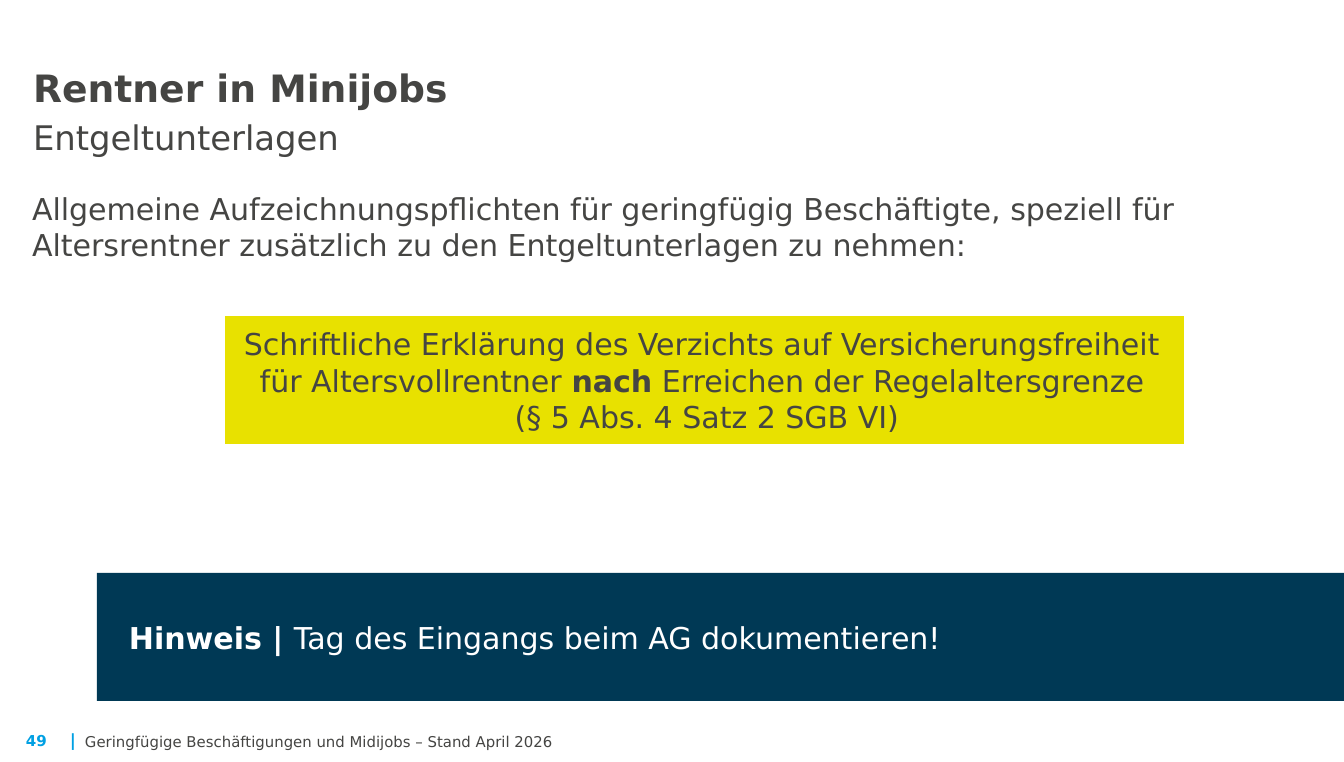
from copy import deepcopy

from lxml import etree
from pptx import Presentation
from pptx.dml.color import RGBColor
from pptx.enum.shapes import MSO_SHAPE
from pptx.enum.text import MSO_ANCHOR, MSO_AUTO_SIZE, PP_ALIGN
from pptx.oxml.ns import qn
from pptx.util import Pt

RECT = MSO_SHAPE.RECTANGLE
TOP, MID, LOW = MSO_ANCHOR.TOP, MSO_ANCHOR.MIDDLE, MSO_ANCHOR.BOTTOM
LEFT, CENTER = PP_ALIGN.LEFT, PP_ALIGN.CENTER
FIXED = MSO_AUTO_SIZE.NONE

SCALE = 914400 / 135.5
WIDTH, HEIGHT = 1344, 762
GREY, BLUE, NAVY, LIME, WHITE = "454543", "00A0E3", "003955", "E8E100", "FFFFFF"


def px(count):
    return round(count * SCALE)


def color(code):
    return RGBColor.from_string(code)


def write(shape, runs, size=16, tint=GREY, align=LEFT, anchor=TOP,
          pad=(0, 0, 0, 0), wrap=True, line=None, after=0, plain=False):
    """Fill one paragraph; each run is (text, bold) or (text, bold, size)."""
    frame = shape.text_frame
    frame.auto_size = FIXED
    frame.word_wrap = wrap
    frame.vertical_anchor = anchor
    (frame.margin_left, frame.margin_top,
     frame.margin_right, frame.margin_bottom) = map(px, pad)
    para = frame.paragraphs[0]
    para.alignment = align
    para.space_before, para.space_after = Pt(0), Pt(after)
    if line:
        para.line_spacing = Pt(line)
    if plain:
        props = para._p.get_or_add_pPr()
        props.set("marL", "0")
        props.set("indent", "0")
        etree.SubElement(props, qn("a:buNone"))
    for text, bold, *own in runs:
        for place, part in enumerate(text.split("\n")):
            if place:
                # The break takes the format of the run before it
                para.add_line_break()
                para._p[-1].append(deepcopy(run.font._element))
            if part:
                run = para.add_run()
                run.text = part
                font = run.font
                font.name, font.bold = "DejaVu Sans", bold
                font.size = Pt(own[0] if own else size)
                font.color.rgb = color(tint)


class Deck:
    def __init__(self):
        self.file = Presentation()
        self.file.slide_width, self.file.slide_height = px(WIDTH), px(HEIGHT)
        self.slide = self.file.slides.add_slide(self.file.slide_layouts[1])

    def holder(self, index, box, runs, **style):
        shape = self.slide.placeholders[index]
        shape.left, shape.top, shape.width, shape.height = map(px, box)
        write(shape, runs, **style)

    def label(self, box, runs, **style):
        write(self.slide.shapes.add_textbox(*map(px, box)), runs, **style)

    def panel(self, box, fill, runs, **style):
        shape = self.slide.shapes.add_shape(RECT, *map(px, box))
        shape.shadow.inherit = False
        shape.fill.solid()
        shape.fill.fore_color.rgb = color(fill)
        shape.line.fill.background()
        write(shape, runs, anchor=MID, **style)


def main():
    deck = Deck()

    # Title and lead text
    deck.holder(0, (33, 61, 1153, 96),
                [("Rentner in Minijobs\n", True, 20), ("Entgeltunterlagen", False, 18)],
                anchor=LOW, line=24.8)
    deck.holder(1, (32, 190, 1281, 512),
                [("Allgemeine Aufzeichnungspflichten für geringfügig Beschäftigte, "
                  "speziell für Altersrentner zusätzlich zu den Entgeltunterlagen "
                  "zu nehmen:", False)],
                after=6, plain=True)

    # Note bar and key statement
    deck.panel((97, 573, 1247, 128), NAVY,
               [("Hinweis | ", True), ("Tag des Eingangs beim AG dokumentieren!", False)],
               tint=WHITE, pad=(32, 28, 32, 28))
    deck.panel((225, 316, 959, 128), LIME,
               [("Schriftliche Erklärung des Verzichts auf Versicherungsfreiheit \n"
                 "für Altersvollrentner ", False),
                ("nach", True),
                (" Erreichen der Regelaltersgrenze \n(§ 5 Abs. 4 Satz 2 SGB VI)", False)],
               align=CENTER, pad=(16, 11, 11, 11))

    # Footer
    deck.label((12, 725, 49, 32), [("49", True)], size=8, tint=BLUE,
               pad=(14, 7, 14, 7), wrap=False)
    deck.label((70, 730, 8, 20), [("|", True)], size=8.9, tint=BLUE,
               anchor=LOW, wrap=False)
    deck.label((85, 730, 1228, 20),
               [("Geringfügige Beschäftigungen und Midijobs – Stand April 2026", False)],
               size=7.9, anchor=LOW)

    deck.file.save("out.pptx")


if __name__ == "__main__":
    main()
